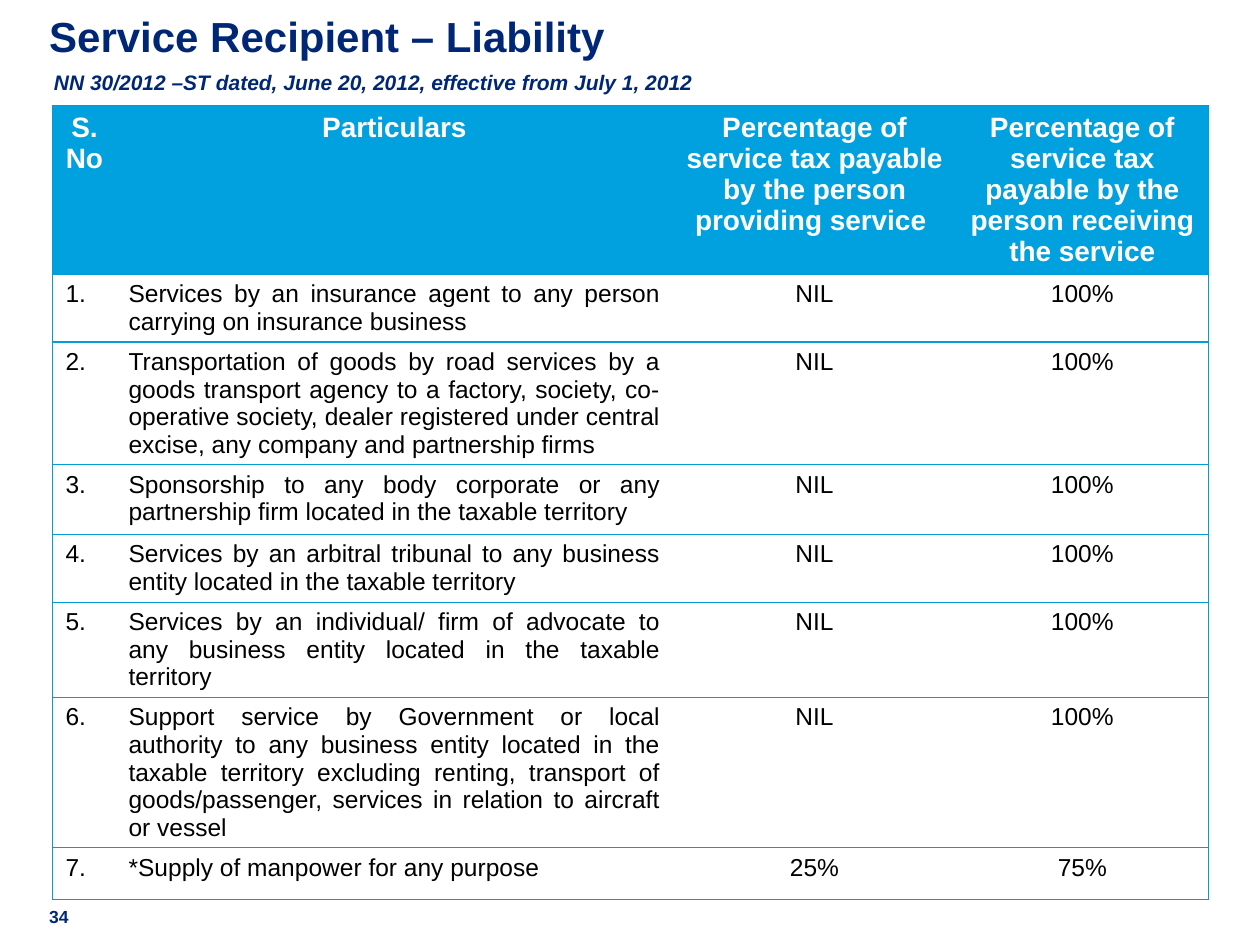
from lxml.etree import SubElement
from pptx import Presentation
from pptx.dml.color import RGBColor
from pptx.enum.text import MSO_ANCHOR as ANCHOR, PP_ALIGN as ALIGN
from pptx.oxml.ns import qn
from pptx.util import Inches, Pt

NAVY, BLUE, LINE, WHITE, BLACK = "002776", "00A1DE", "009DD9", "FFFFFF", "000000"
COLS = [0.5, 4.42, 2.25, 2]
ROW_HEIGHTS = [1.33, 0.54, 0.97, 0.55, 0.54, 0.75, 1.19, 0.41]
ALIGNS = [ALIGN.LEFT, ALIGN.JUSTIFY, ALIGN.CENTER, ALIGN.CENTER]
HEADER = [
    "S.No",
    "Particulars",
    "Percentage of service tax payable by the person providing service ",
    "Percentage of service tax payable by the person receiving the service",
]
SERVICES = [
    ("Services by an insurance agent to any person carrying on insurance business", "NIL", "100%"),
    ("Transportation of goods by road services by a goods transport agency to a factory, "
     "society, co-operative society, dealer registered under central excise, any company "
     "and partnership firms", "NIL", "100%"),
    ("Sponsorship to any body corporate or any partnership firm located in the taxable "
     "territory", "NIL", "100%"),
    ("Services by an arbitral tribunal to any business entity located in the taxable "
     "territory", "NIL", "100%"),
    ("Services by an individual/ firm of advocate to any business entity located in the "
     "taxable territory", "NIL", "100%"),
    ("Support service by Government or local authority to any business entity located in "
     "the taxable territory excluding renting, transport of goods/passenger, services in "
     "relation to aircraft or vessel", "NIL", "100%"),
    ("*Supply of manpower for any purpose ", "25%", "75%"),
]


def rgb(value):
    return RGBColor.from_string(value)


def write(tf, text, size, color, align=ALIGN.LEFT, bold=True, italic=False):
    p = tf.paragraphs[0]
    p.alignment = align
    r = p.add_run()
    r.text = text
    formats = {"name": "Arial", "size": Pt(size), "bold": bold, "italic": italic}
    for name, value in formats.items():
        setattr(r.font, name, value)
    r.font.color.rgb = rgb(color)


def set_frame(tf, inset_x=0, inset_y=0):
    formats = {
        "word_wrap": True,
        "vertical_anchor": ANCHOR.TOP,
        "margin_left": Inches(inset_x),
        "margin_right": Inches(inset_x),
        "margin_top": Inches(inset_y),
        "margin_bottom": Inches(inset_y),
    }
    for name, value in formats.items():
        setattr(tf, name, value)


def add_title(s, box, text):
    sp = s.shapes.title
    for name, value in zip(("left", "top", "width", "height"), box):
        setattr(sp, name, Inches(value))
    set_frame(sp.text_frame)
    write(sp.text_frame, text, 24, NAVY)


def add_label(s, box, text, size, inset_x=0, inset_y=0, italic=False):
    tf = s.shapes.add_textbox(*map(Inches, box)).text_frame
    set_frame(tf, inset_x, inset_y)
    write(tf, text, size, NAVY, italic=italic)


def set_borders(cell, first, last):
    tcPr = cell._tc.get_or_add_tcPr()
    for side, shown in (("L", first), ("R", last), ("T", True), ("B", True)):
        ln = SubElement(tcPr, qn(f"a:ln{side}"), w=str(Pt(0.75)))
        if shown:
            fill = SubElement(ln, qn("a:solidFill"))
            SubElement(fill, qn("a:srgbClr"), val=LINE)
        else:
            SubElement(ln, qn("a:noFill"))


def add_liability_table(s, left, top):
    rows = [HEADER] + [(f"{i}.", *service) for i, service in enumerate(SERVICES, 1)]
    box = map(Inches, (left, top, sum(COLS), sum(ROW_HEIGHTS)))
    table = s.shapes.add_table(len(rows), len(COLS), *box).table
    table.horz_banding = False
    for col, width in zip(table.columns, COLS):
        col.width = Inches(width)
    for row, height in zip(table.rows, ROW_HEIGHTS):
        row.height = Inches(height)
    for i, row in enumerate(rows):
        for j, text in enumerate(row):
            cell = table.cell(i, j)
            set_borders(cell, j == 0, j == len(COLS) - 1)
            if i == 0:
                cell.fill.solid()
                cell.fill.fore_color.rgb = rgb(BLUE)
                write(cell.text_frame, text, 16, WHITE, ALIGN.CENTER)
            else:
                cell.fill.background()
                write(cell.text_frame, text, 14, BLACK, ALIGNS[j], bold=False)


def main():
    prs = Presentation()
    prs.slide_width, prs.slide_height = Inches(10), Inches(7.5)
    s = prs.slides.add_slide(prs.slide_layouts[5])
    add_title(s, (0.39, 0.08, 9.21, 0.69), "Service Recipient – Liability")
    add_liability_table(s, 0.42, 0.84)
    add_label(s, (0.33, 0.5, 9.17, 0.3),
              "NN 30/2012 –ST dated, June 20, 2012, effective from July 1, 2012",
              12, 0.1, 0.05, italic=True)
    add_label(s, (0.39, 7.19, 0.39, 0.13), "34", 10)
    prs.save("out.pptx")


if __name__ == "__main__":
    main()
